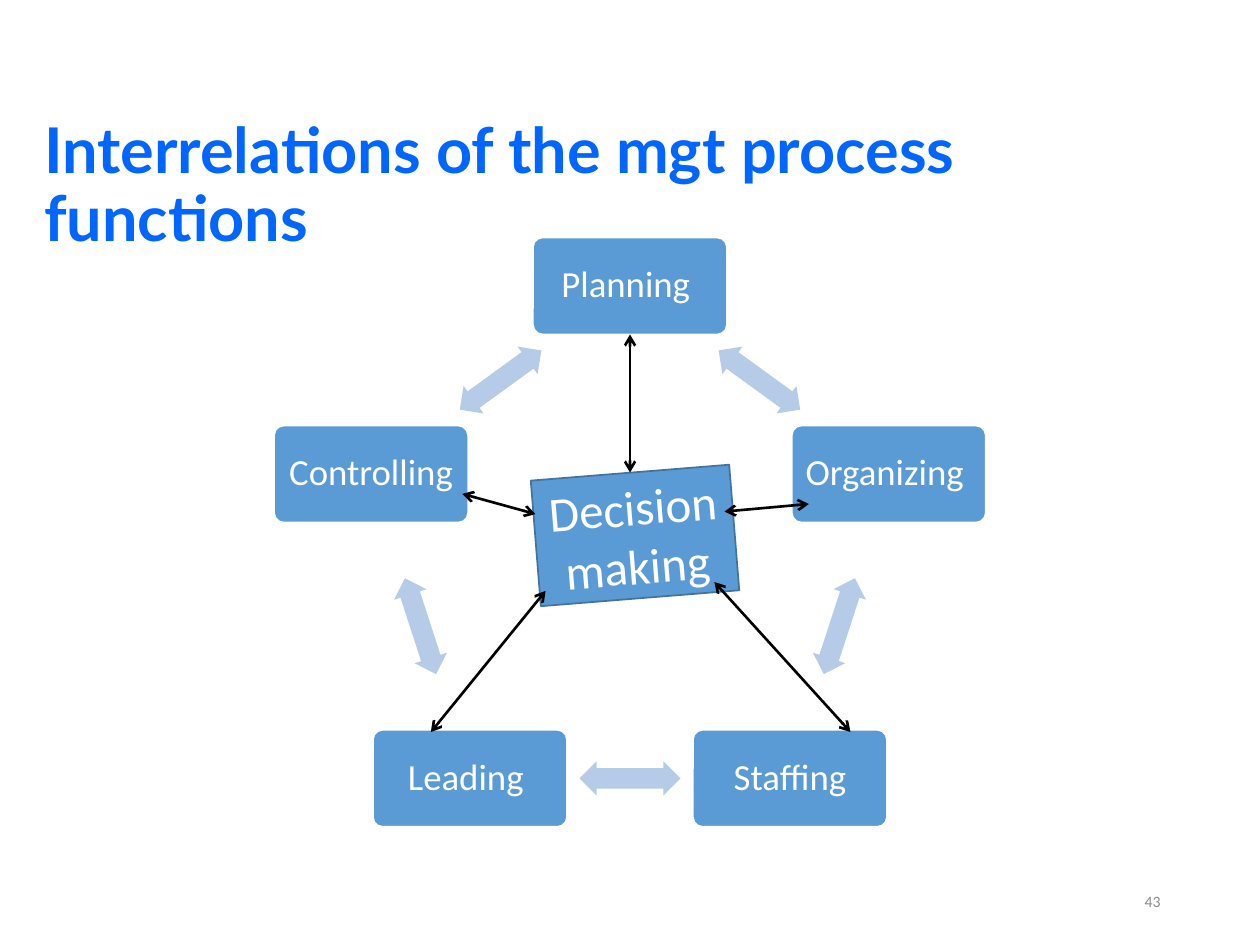
import math

from lxml import etree
from pptx import Presentation
from pptx import util as u
from pptx.dml.color import RGBColor
from pptx.enum import shapes, text
from pptx.oxml.ns import qn

BLUE, PALE_BLUE, EDGE_BLUE = "5B9BD5", "B5CBE7", "43739E"
TITLE_BLUE, WHITE, BLACK, GRAY = "0066FF", "FFFFFF", "000000", "8C8C8C"

# The functions stand on a regular pentagon, clockwise from the top
FUNCTIONS = ["Planning ", "Organizing ", "Staffing", "Leading ", "Controlling "]
CENTER_X, CENTER_Y, RADIUS = 5, 4.43, 2.16
STEP = 360 / len(FUNCTIONS)
BOX_SIZE = (1.54, 0.77)
BOX_MARGIN = 0.07
ARROW_SIZE = (0.8, 0.27)

# Links between decision making and the functions other than planning
LINKS = [
    ((3.67, 3.92), (4.25, 4.08)),
    ((5.75, 4.06), (6.42, 4)),
    ((5.67, 4.62), (6.75, 5.81)),
    ((4.33, 4.69), (3.42, 5.81)),
]


def color(value):
    return RGBColor.from_string(value)


def write(shape, words, size, fill, align, font="Calibri", bold=False, spacing=None):
    frame = shape.text_frame
    frame.word_wrap = True
    frame.auto_size = text.MSO_AUTO_SIZE.NONE
    frame.vertical_anchor = text.MSO_ANCHOR.MIDDLE
    paragraph = frame.paragraphs[0]
    paragraph.alignment = align
    paragraph.line_spacing = spacing
    run = paragraph.add_run()
    run.text = words
    run.font.name, run.font.size, run.font.bold = font, u.Pt(size), bold
    run.font.color.rgb = color(fill)


def add_centered(slide, kind, center, size, fill, line=None, rotation=0):
    """Add a preset shape around its center point."""
    left, top = (middle - length / 2 for middle, length in zip(center, size))
    shape = slide.shapes.add_shape(kind, *map(u.Inches, (left, top, *size)))
    shape.shadow.inherit = False
    shape.rotation = rotation
    shape.fill.solid()
    shape.fill.fore_color.rgb = color(fill)
    if line:
        shape.line.color.rgb = color(line)
        shape.line.width = u.Pt(1)
    else:
        shape.line.fill.background()
    return shape


def add_link(slide, start, end):
    """Add a black line with an open arrowhead at both ends."""
    link = slide.shapes.add_connector(
        shapes.MSO_CONNECTOR.STRAIGHT, *map(u.Inches, (*start, *end)))
    link.line.color.rgb = color(BLACK)
    link.line.width = u.Pt(1.5)
    for side in ("a:headEnd", "a:tailEnd"):
        etree.SubElement(link.line._get_or_add_ln(), qn(side), type="arrow")
    etree.SubElement(link._element.spPr, qn("a:effectLst"))
    return link


def pentagon_point(index):
    angle = math.radians(STEP * index)
    return CENTER_X + RADIUS * math.sin(angle), CENTER_Y - RADIUS * math.cos(angle)


def add_cycle(slide):
    """Add the function boxes and the double arrows between neighbors."""
    boxes = []
    points = [pentagon_point(index) for index in range(len(FUNCTIONS))]
    for index, name in enumerate(FUNCTIONS):
        box = add_centered(slide, shapes.MSO_SHAPE.ROUNDED_RECTANGLE,
                           points[index], BOX_SIZE, BLUE, WHITE)
        box.adjustments[0] = 0.1
        frame = box.text_frame
        frame.margin_left = frame.margin_right = u.Inches(BOX_MARGIN)
        write(box, name, 21, WHITE, text.PP_ALIGN.CENTER, spacing=0.9)
        boxes.append(box)

        following = points[(index + 1) % len(points)]
        middle = [(a + b) / 2 for a, b in zip(points[index], following)]
        arrow = add_centered(slide, shapes.MSO_SHAPE.LEFT_RIGHT_ARROW, middle,
                             ARROW_SIZE, PALE_BLUE, rotation=STEP * (index + 0.5))
        arrow.adjustments[0], arrow.adjustments[1] = 0.6, 0.5
    return boxes


def add_title(slide):
    title = slide.shapes.title
    title.left, title.top, title.width, title.height = map(
        u.Inches, (0.25, 1.16, 9.58, 0.65))
    write(title, "Interrelations of the mgt process functions", 36, TITLE_BLUE,
          text.PP_ALIGN.LEFT, font="Lato", bold=True, spacing=0.9)


def main():
    presentation = Presentation()
    presentation.slide_width, presentation.slide_height = u.Inches(10), u.Inches(7.5)
    slide = presentation.slides.add_slide(presentation.slide_layouts[5])
    add_title(slide)

    # Cycle of functions around decision making
    planning = add_cycle(slide)[0]
    decision = add_centered(slide, shapes.MSO_SHAPE.RECTANGLE, (5.04, 4.25),
                            (1.58, 1), BLUE, EDGE_BLUE, rotation=355.4)
    write(decision, "Decision making", 28, WHITE, text.PP_ALIGN.CENTER)

    # Links to the middle; the rotated box shifts the end of the first
    planning_link = add_link(slide, (5, 2.65), (5, 3.75))
    planning_link.begin_connect(planning, 2)
    planning_link.end_connect(decision, 0)
    planning_link.end_x = u.Inches(5)
    for start, end in LINKS:
        add_link(slide, start, end)

    # Slide number
    number = slide.shapes.add_textbox(*map(u.Inches, (7.06, 6.95, 2.25, 0.4)))
    write(number, "43", 9, GRAY, text.PP_ALIGN.RIGHT)

    presentation.save("out.pptx")


if __name__ == "__main__":
    main()
